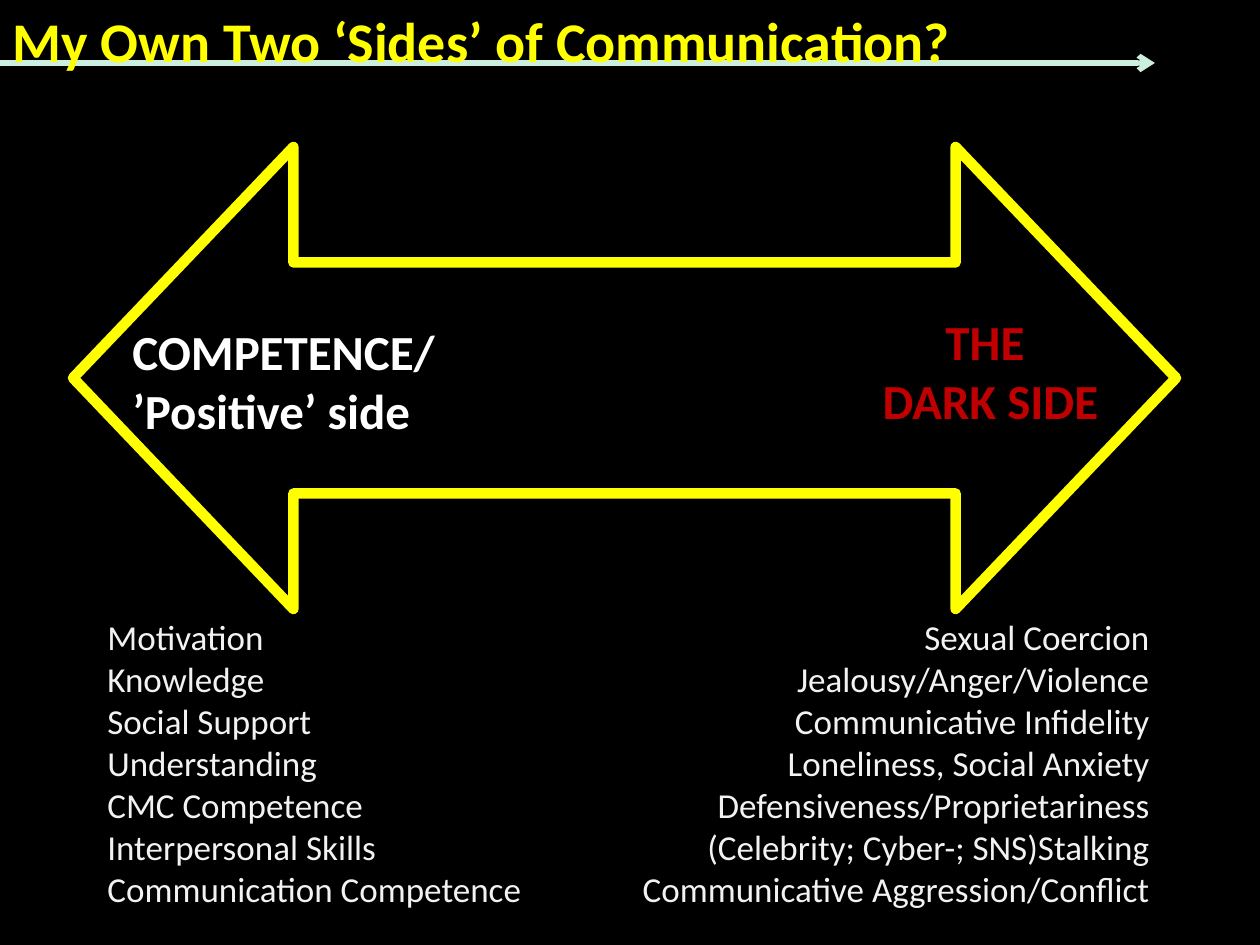
"""Build the slide on the two sides of communication."""
import dataclasses

import pptx
import pptx.dml.color
import pptx.enum.shapes
import pptx.enum.text
import pptx.oxml
import pptx.oxml.ns
import pptx.util

PX = 914400 // 126
ALIGN = pptx.enum.text.PP_ALIGN
COLORS = {
    "black": "000000",
    "yellow": "FFFF00",
    "white": "FFFFFF",
    "red": "C00000",
    "pale": "F2F2F2",
    "mint": "CCEEDF",
}


@dataclasses.dataclass(frozen=True)
class Frame:
    left: int
    top: int
    width: int
    height: int

    def emu(self) -> list[int]:
        return [value * PX for value in dataclasses.astuple(self)]


@dataclasses.dataclass(frozen=True)
class Label:
    frame: Frame
    lines: tuple[str, ...]
    color: str
    align: ALIGN


SIDES = (
    Label(Frame(120, 315, 331, 131), ("COMPETENCE/", "’Positive’ side"), "white", ALIGN.LEFT),
    Label(Frame(869, 305, 243, 131), ("THE ", "DARK SIDE"), "red", ALIGN.CENTER),
)
LISTS = (
    Label(
        Frame(95, 609, 444, 310),
        (
            "Motivation",
            "Knowledge",
            "Social Support",
            "Understanding",
            "CMC Competence",
            "Interpersonal Skills",
            "Communication Competence",
        ),
        "pale",
        ALIGN.LEFT,
    ),
    Label(
        Frame(624, 609, 538, 310),
        (
            "Sexual Coercion",
            "Jealousy/Anger/Violence",
            "Communicative Infidelity",
            "Loneliness, Social Anxiety",
            "Defensiveness/Proprietariness",
            "(Celebrity; Cyber-; SNS)Stalking",
            "Communicative Aggression/Conflict",
        ),
        "pale",
        ALIGN.RIGHT,
    ),
)


def rgb(name: str) -> pptx.dml.color.RGBColor:
    return pptx.dml.color.RGBColor.from_string(COLORS[name])


def write(box, lines, *, size: int, color: str, bold: bool = False, align=ALIGN.LEFT) -> None:
    frame = box.text_frame
    frame.word_wrap = False
    frame.auto_size = pptx.enum.text.MSO_AUTO_SIZE.SHAPE_TO_FIT_TEXT
    frame.vertical_anchor = pptx.enum.text.MSO_ANCHOR.TOP
    frame.text = "\n".join(lines)
    for para in frame.paragraphs:
        para.alignment = align
        for span in para.runs:
            span.font.name = "Calibri"
            span.font.size = pptx.util.Pt(size)
            span.font.bold = bold
            span.font.color.rgb = rgb(color)


def draw_label(shapes, label: Label, *, size: int, bold: bool = False) -> None:
    box = shapes.add_textbox(*label.frame.emu())
    write(box, label.lines, size=size, color=label.color, bold=bold, align=label.align)


def draw_double_arrow(shapes, frame: Frame) -> None:
    arrow = shapes.add_shape(pptx.enum.shapes.MSO_SHAPE.LEFT_RIGHT_ARROW, *frame.emu())
    arrow.adjustments[0] = 0.5
    arrow.adjustments[1] = 0.477
    arrow.shadow.inherit = False
    arrow.fill.solid()
    arrow.fill.fore_color.rgb = rgb("black")
    arrow.line.color.rgb = rgb("yellow")
    arrow.line.width = pptx.util.Pt(6)


def draw_underline(shapes, width: int, top: int) -> None:
    rule = shapes.add_connector(
        pptx.enum.shapes.MSO_CONNECTOR.STRAIGHT, 0, top * PX, width * PX, top * PX
    )
    rule.line.color.rgb = rgb("mint")
    rule.line.width = pptx.util.Pt(3)
    head = pptx.oxml.parse_xml(f'<a:tailEnd {pptx.oxml.ns.nsdecls("a")} type="arrow"/>')
    rule.line._get_or_add_ln().append(head)
    effects = pptx.oxml.parse_xml(f'<a:effectLst {pptx.oxml.ns.nsdecls("a")}/>')
    rule.element.spPr.append(effects)


def place_title(page, frame: Frame, text: str) -> None:
    title = page.shapes.title
    title.left, title.top, title.width, title.height = frame.emu()
    write(title, [text], size=32, color="yellow", bold=True)
    title.element.getparent().append(title.element)


def main() -> None:
    deck = pptx.Presentation()
    deck.slide_width = pptx.util.Inches(10)
    deck.slide_height = pptx.util.Inches(7.5)
    page = deck.slides.add_slide(deck.slide_layouts.get_by_name("Title Only"))
    page.background.fill.solid()
    page.background.fill.fore_color.rgb = rgb("black")

    group = page.shapes.add_group_shape()
    draw_double_arrow(group.shapes, Frame(73, 147, 1103, 462))
    for side in SIDES:
        draw_label(group.shapes, side, size=28, bold=True)
    for column in LISTS:
        draw_label(page.shapes, column, size=20)
    draw_underline(page.shapes, 1155, 63)
    place_title(page, Frame(0, 0, 973, 81), "My Own Two ‘Sides’ of Communication?")
    deck.save("out.pptx")


if __name__ == "__main__":
    main()
